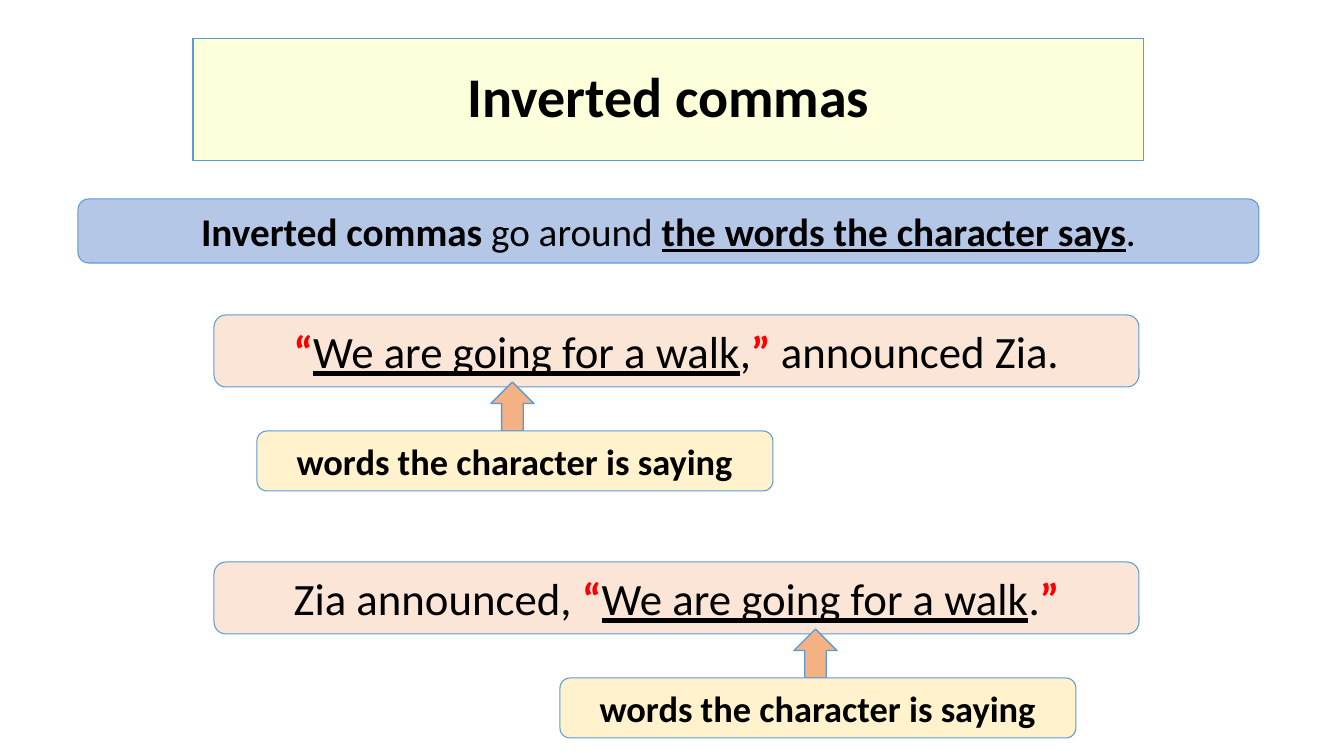
"""Build a slide on inverted commas with two marked-up example sentences."""
from pptx import Presentation
from pptx.dml.color import RGBColor
from pptx.enum.shapes import MSO_SHAPE
from pptx.enum.text import MSO_ANCHOR, PP_ALIGN
from pptx.util import Emu, Pt

THEME = {
    "font": "Calibri", "ink": "000000", "mark": "FF0000", "edge": "5B9BD5",
    "title": "FDFEDA", "rule": "B4C7E7", "quote": "FBE5D6",
    "arrow": "F4B183", "label": "FFF2CC",
    "size": {"title": 40, "rule": 28, "quote": 32, "label": 26},
}
STYLES = {
    "plain": (False, False, "ink"),
    "bold": (True, False, "ink"),
    "line": (False, True, "ink"),
    "strong": (True, True, "ink"),
    "mark": (True, False, "mark"),
}


def px(count):
    return Emu(round(count * 914400 / 100.8))


def dress(shape, role, runs=(), width=0.75):
    shape.shadow.inherit = False
    shape.fill.solid()
    shape.fill.fore_color.rgb = RGBColor.from_string(THEME[role])
    shape.line.color.rgb = RGBColor.from_string(THEME["edge"])
    shape.line.width = Pt(width)
    frame = shape.text_frame
    frame.word_wrap = True
    frame.vertical_anchor = MSO_ANCHOR.MIDDLE
    para = frame.paragraphs[0]
    para.alignment = PP_ALIGN.CENTER
    for text, style in runs:
        run = para.add_run()
        run.text = text
        font = run.font
        font.name = THEME["font"]
        font.size = Pt(THEME["size"][role])
        font.bold, font.underline, color = STYLES[style]
        font.color.rgb = RGBColor.from_string(THEME[color])


deck = Presentation()
deck.slide_width, deck.slide_height = px(1344), px(756)
slide = deck.slides.add_slide(deck.slide_layouts[5])
shapes = slide.shapes

title = shapes.title
title.left, title.top, title.width, title.height = map(px, (193, 38, 951, 123))
dress(title, "title", [("Inverted commas", "bold")])
title.text_frame.paragraphs[0].line_spacing = 0.9

rule = shapes.add_shape(MSO_SHAPE.ROUNDED_RECTANGLE, px(78), px(199), px(1181), px(64))
dress(rule, "rule", [
    ("Inverted commas ", "bold"),
    ("go around ", "plain"),
    ("the words the character says", "strong"),
    (".", "plain"),
])

speech = "We are going for a walk"
quotes = [
    (315, 257, [("“", "mark"), (speech, "line"), (",", "plain"),
                ("”", "mark"), (" announced Zia.", "plain")]),
    (562, 560, [("Zia announced, ", "plain"), ("“", "mark"),
                (speech, "line"), (".", "plain"), ("”", "mark")]),
]
for top, left, runs in quotes:
    quote = shapes.add_shape(
        MSO_SHAPE.ROUNDED_RECTANGLE, px(214), px(top), px(925), px(72))
    dress(quote, "quote", runs)
    arrow = shapes.add_shape(
        MSO_SHAPE.UP_ARROW, px(left + 234), px(top + 67), px(43), px(49))
    dress(arrow, "arrow", width=1)
    label = shapes.add_shape(
        MSO_SHAPE.ROUNDED_RECTANGLE, px(left), px(top + 116), px(516), px(60))
    dress(label, "label", [("words the character is saying", "bold")])

deck.save("out.pptx")
